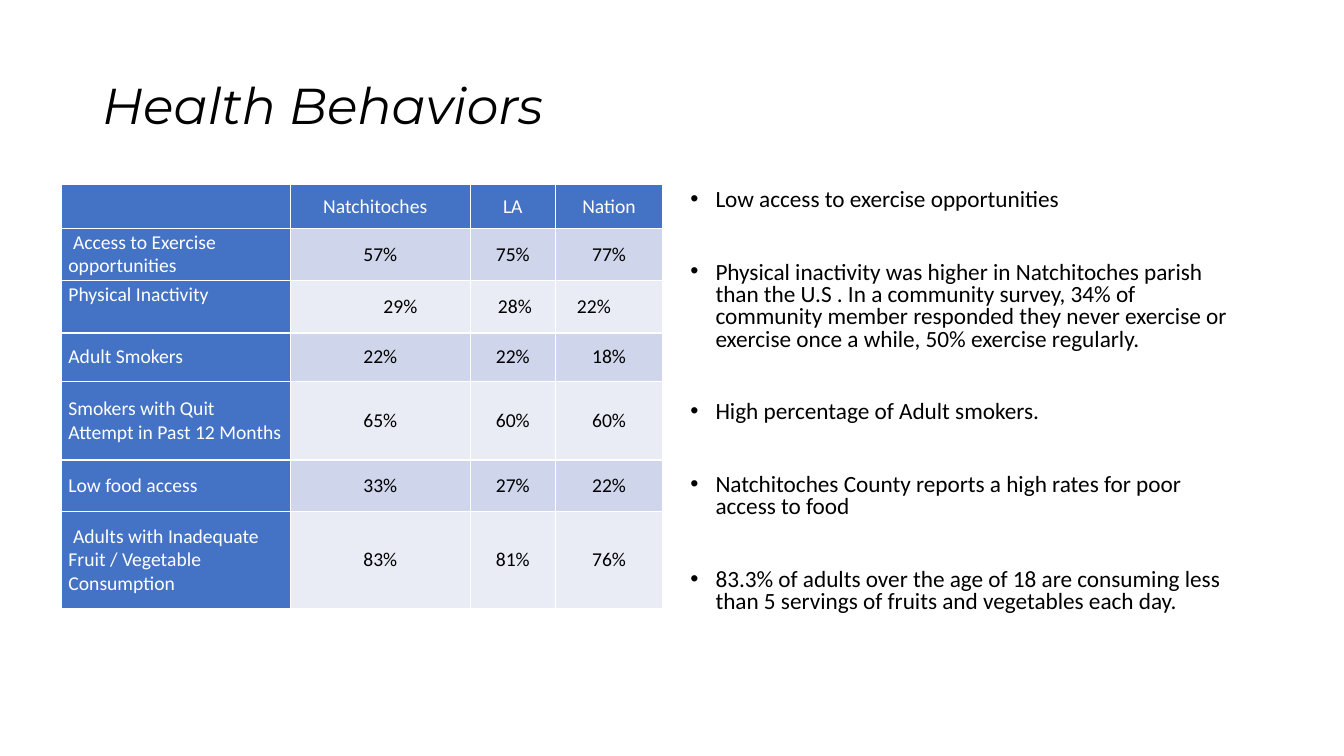
from lxml import etree
from pptx import Presentation
from pptx.dml.color import RGBColor
from pptx.enum.text import MSO_ANCHOR, PP_ALIGN
from pptx.oxml.ns import qn
from pptx.util import Inches, Pt

TOP, MID = MSO_ANCHOR.TOP, MSO_ANCHOR.MIDDLE
LEFT, CENTER = PP_ALIGN.LEFT, PP_ALIGN.CENTER
COLORS = {"ink": "000000", "paper": "FFFFFF", "head": "4472C4",
          "dark": "CFD5EA", "light": "E9EBF5"}
COLS, ROWS = 160, 90  # slide grid, twelve units to the inch

TITLE = "Health Behaviors"
RATES = [
    ["", "Natchitoches", "LA", "Nation"],
    ["Access to Exercise opportunities", "57%", "75%", "77%"],
    ["Physical Inactivity", "29%", "28%", "22%"],
    ["Adult Smokers", "22%", "22%", "18%"],
    ["Smokers with Quit Attempt in Past 12 Months", "65%", "60%", "60%"],
    ["Low food access", "33%", "27%", "22%"],
    ["Adults with Inadequate Fruit / Vegetable Consumption", "83%", "81%", "76%"],
]
WIDTHS = [27.24, 21.48, 10.08, 12.84]
HEIGHTS = [5.16, 6.24, 6.24, 5.76, 9.36, 6.12, 11.64]
PADS = {(0, 1): (0, 1.2), (2, 1): (4.8, 0), (2, 2): (0.5, 0), (2, 3): (0, 3.6)}
INDENTS = {1: 0.55, 6: 0.55}  # first-line indent of row labels
POINTS = [
    "Low access to exercise opportunities",
    "Physical inactivity was higher in Natchitoches parish than the U.S . "
    "In a community survey, 34% of community member responded they never "
    "exercise or exercise once a while, 50% exercise regularly.",
    "High percentage of Adult smokers.",
    "Natchitoches County reports a high rates for poor access to food",
    "83.3% of adults over the age of 18 are consuming less than 5 servings "
    "of fruits and vegetables each day.",
]


def unit(n):
    return Inches(n / 12)


def put(para, text, size, font="Calibri", color="ink", italic=False,
        align=LEFT, line=None, before=0, margin=0, indent=0, bullet=None):
    """Fill one paragraph with formatted text."""
    props = para._p.get_or_add_pPr()
    props.set("marL", str(unit(margin)))
    props.set("indent", str(unit(indent)))
    if bullet:
        etree.SubElement(props, qn("a:buFont")).set("typeface", "Arial")
        etree.SubElement(props, qn("a:buChar")).set("char", bullet)
    para.alignment, para.line_spacing = align, line
    para.space_before = Pt(before)
    run = para.add_run()
    run.text = text
    run.font.size, run.font.name, run.font.italic = Pt(size), font, italic
    run.font.color.rgb = RGBColor.from_string(COLORS[color])


def add_frame(slide, box, anchor):
    frame = slide.shapes.add_textbox(*map(unit, box)).text_frame
    frame.word_wrap = True
    frame.vertical_anchor = anchor
    return frame


def add_title(slide, box):
    frame = add_frame(slide, box, MID)
    put(frame.paragraphs[0], TITLE, 36, font="Montserrat", italic=True, line=0.9)


def paint(cell, color):
    """Give a cell white borders and a plain fill."""
    props = cell._tc.get_or_add_tcPr()
    for side in ("lnL", "lnR", "lnT", "lnB"):
        edge = etree.SubElement(props, qn("a:" + side), w=str(Pt(1)))
        fill = etree.SubElement(edge, qn("a:solidFill"))
        etree.SubElement(fill, qn("a:srgbClr"), val=COLORS["paper"])
    cell.fill.solid()
    cell.fill.fore_color.rgb = RGBColor.from_string(COLORS[color])


def add_rates(slide, box):
    table = slide.shapes.add_table(len(RATES), len(WIDTHS), *map(unit, box)).table
    for col, width in zip(table.columns, WIDTHS):
        col.width = unit(width)
    for row, height in zip(table.rows, HEIGHTS):
        row.height = unit(height)
    for r, row in enumerate(RATES):
        for c, text in enumerate(row):
            cell = table.cell(r, c)
            head = r == 0 or c == 0
            paint(cell, "head" if head else "dark" if r % 2 else "light")
            left, right = PADS.get((r, c), (0, 0))
            cell.margin_left, cell.margin_right = unit(0.85 + left), unit(0.85 + right)
            cell.margin_top = cell.margin_bottom = 0
            cell.vertical_anchor = MID
            if text:
                put(cell.text_frame.paragraphs[0], text, 14,
                    color="paper" if head else "ink",
                    align=CENTER if c else LEFT,
                    indent=0 if c else INDENTS.get(r, 0))
    label = table.cell(2, 0)
    label.vertical_anchor, label.margin_top = TOP, unit(0.25)


def add_points(slide, box):
    frame = add_frame(slide, box, TOP)
    for i, text in enumerate(POINTS):
        para = frame.add_paragraph() if i else frame.paragraphs[0]
        put(para, text, 16.6, line=0.8, before=36 if i else 0,
            margin=3, indent=-3, bullet="•")


def main():
    deck = Presentation()
    deck.slide_width, deck.slide_height = unit(COLS), unit(ROWS)
    slide = deck.slides.add_slide(deck.slide_layouts[6])
    add_title(slide, (11, 4.2, 138, 17.4))
    add_rates(slide, (7.3, 22, sum(WIDTHS), sum(HEIGHTS)))
    add_points(slide, (81, 22, 68, 57))
    deck.save("out.pptx")


if __name__ == "__main__":
    main()
